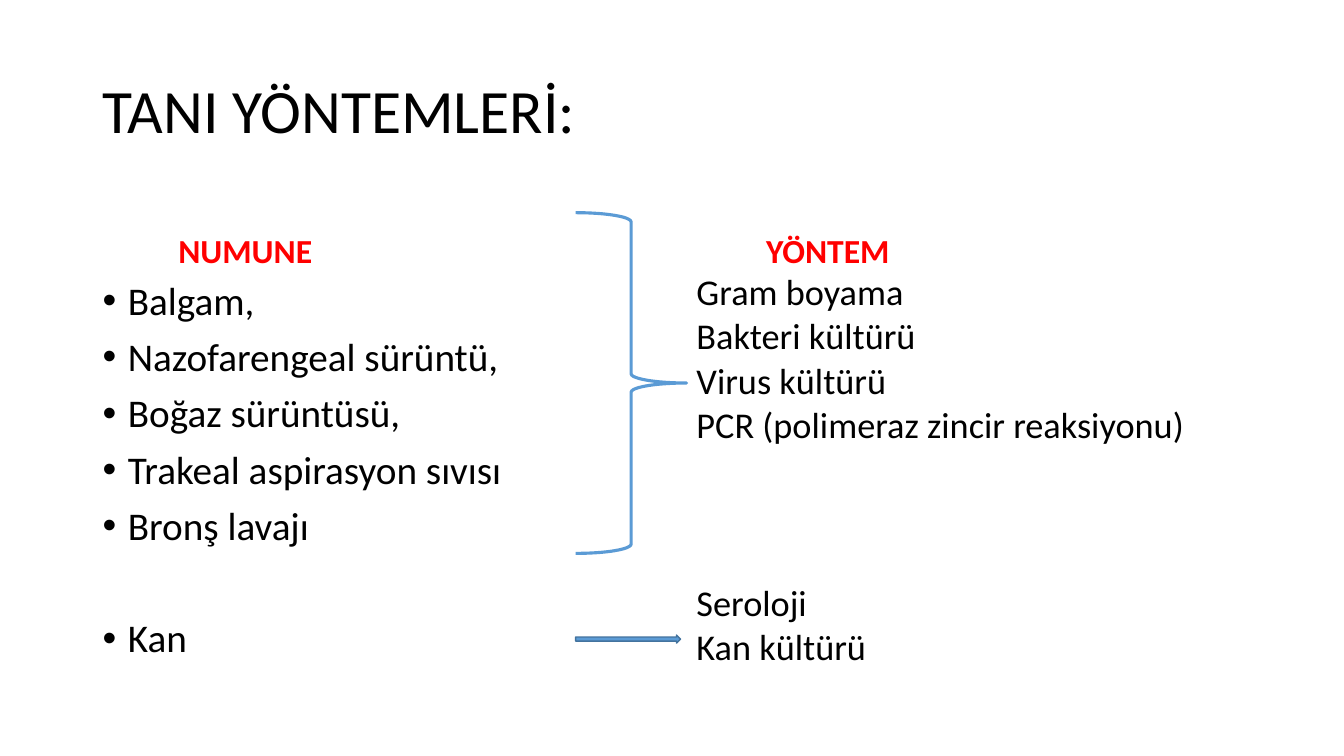
from pptx import Presentation
from pptx.dml.color import RGBColor
from pptx.enum.shapes import MSO_SHAPE
from pptx.enum.text import MSO_ANCHOR
from pptx.oxml.ns import qn
from pptx.util import Inches, Pt
from lxml.etree import SubElement


def color(hex_string):
    return RGBColor.from_string(hex_string)


def add_text(box, lines, font, spacing=0.9, anchor=MSO_ANCHOR.TOP, before=10,
             indent=0, bullet=False, gaps=None):
    """Place one paragraph per line; gaps gives wider space before some lines."""
    frame = slide.shapes.add_textbox(*map(Inches, box)).text_frame
    frame.word_wrap = True
    frame.vertical_anchor = anchor
    for index, line in enumerate(lines):
        paragraph = frame.paragraphs[0] if index == 0 else frame.add_paragraph()
        paragraph.line_spacing = spacing
        paragraph.space_before = Pt((gaps or {}).get(line, before))
        run = paragraph.add_run()
        run.text = line
        run.font.color.rgb = color(font["color"])
        for key, value in {"name": "Calibri", **font["format"]}.items():
            setattr(run.font, key, value)
        properties = paragraph._p.get_or_add_pPr()
        properties.set("marL", str(Inches(indent)))
        if bullet:
            properties.set("indent", str(-Inches(indent)))
            SubElement(properties, qn("a:buFont")).set("typeface", "Arial")
            SubElement(properties, qn("a:buChar")).set("char", "•")


presentation = Presentation()
presentation.slide_width = Inches(13.33)
presentation.slide_height = Inches(7.5)
slide = presentation.slides.add_slide(presentation.slide_layouts[6])

# Title
add_text((0.92, 0.4, 11.5, 1.45), ["TANI YÖNTEMLERİ:"],
         {"color": "000000", "format": {"size": Pt(44)}},
         anchor=MSO_ANCHOR.MIDDLE, before=0)

# Column headings
for heading, left in (("NUMUNE", 0.92), ("YÖNTEM", 6.75)):
    add_text((left, 1.84, 5.65, 0.9), [heading],
             {"color": "FF0000", "format": {"size": Pt(24), "bold": True}},
             anchor=MSO_ANCHOR.BOTTOM, indent=0.75)

# Specimens
add_text((0.92, 2.74, 5.64, 4.03),
         ["Balgam,", "Nazofarengeal sürüntü,", "Boğaz sürüntüsü,",
          "Trakeal aspirasyon sıvısı", "Bronş lavajı", "Kan"],
         {"color": "000000", "format": {"size": Pt(28)}},
         indent=0.25, bullet=True, gaps={"Kan": 50})

# Methods
add_text((6.81, 2.74, 5.67, 4.03),
         ["Gram boyama", "Bakteri kültürü", "Virus kültürü",
          "PCR (polimeraz zincir reaksiyonu)", "Seroloji", "Kan kültürü"],
         {"color": "000000", "format": {"size": Pt(25.9)}},
         spacing=0.7, gaps={"Seroloji": 105})

# Brace from the specimens to their methods
brace = slide.shapes.add_shape(MSO_SHAPE.RIGHT_BRACE, Inches(5.71), Inches(2.11),
                               Inches(1.1), Inches(3.38))
brace.shadow.inherit = False
brace.fill.background()
brace.line.color.rgb = color("5B9BD5")
brace.line.width = Pt(2.25)

# Arrow from blood to its methods
arrow = slide.shapes.add_shape(MSO_SHAPE.RIGHT_ARROW, Inches(5.71), Inches(6.3),
                               Inches(1.04), Inches(0.08))
arrow.shadow.inherit = False
arrow.fill.solid()
arrow.fill.fore_color.rgb = color("5B9BD5")
arrow.line.color.rgb = color("43739E")
arrow.line.width = Pt(1)

presentation.save("out.pptx")
